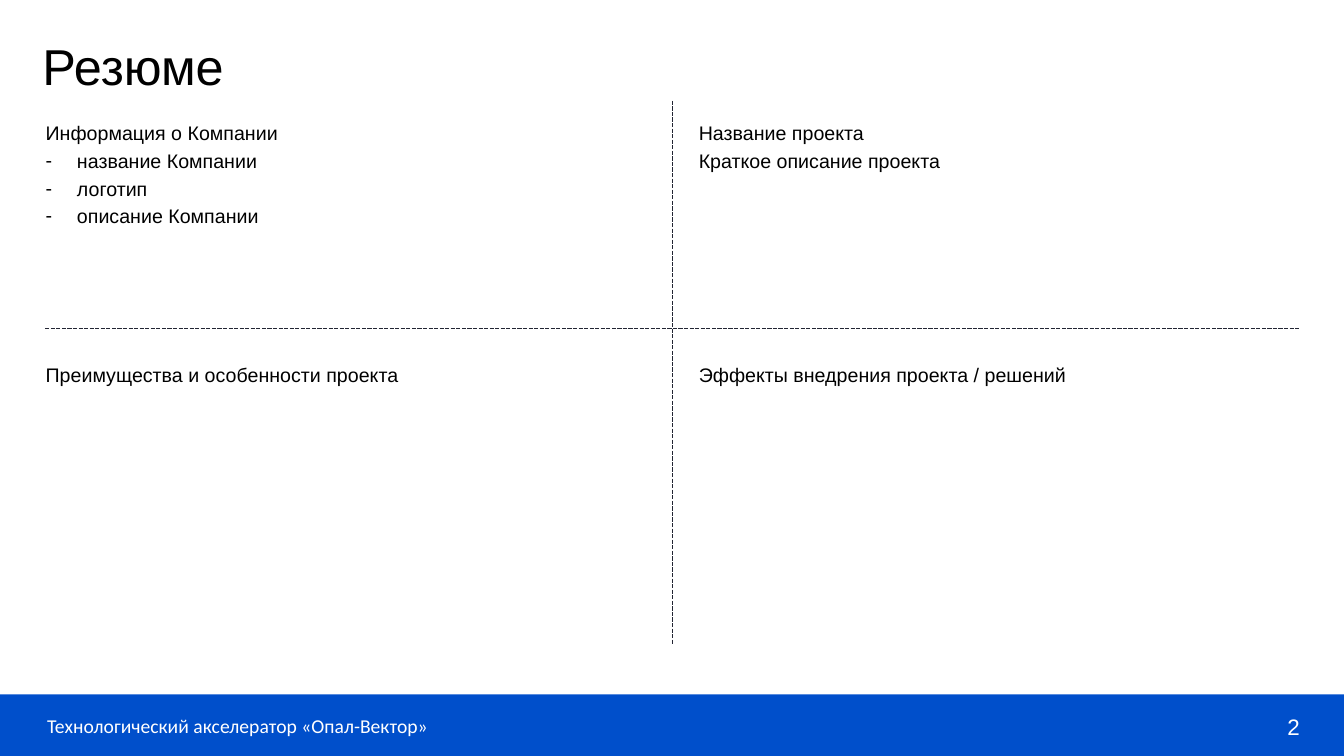
from pptx import Presentation
from pptx.dml.color import RGBColor
from pptx.enum.dml import MSO_LINE
from pptx.enum.shapes import MSO_CONNECTOR, MSO_SHAPE
from pptx.enum.text import MSO_ANCHOR, MSO_AUTO_SIZE, PP_ALIGN
from pptx.oxml.ns import qn
from pptx.util import Cm, Pt
from lxml.etree import SubElement

# Content: quadrants row by row, each line as (bulleted, text)
TITLE = "Резюме"
QUADRANTS = [
    [
        [(False, "Информация о Компании"), (True, "название Компании"),
         (True, "логотип"), (True, "описание Компании")],
        [(False, "Название проекта"), (False, "Краткое описание проекта")],
    ],
    [
        [(False, "Преимущества и особенности проекта")],
        [(False, "Эффекты внедрения проекта / решений")],
    ],
]
FOOTER = "Технологический акселератор «Опал-Вектор»"
PAGE_NUMBER = "2"

# Layout in centimetres
PAGE_WIDTH, PAGE_HEIGHT = 33.87, 19.05
COLUMNS = [(1.02, 15.42), (17.48, 15.29)]
ROW_TOPS = [2.92, 9.02]
LINE_HEIGHT, LINE_STEP = 0.86, 0.7
BAR_TOP = 17.5
DIVIDERS = [(16.94, 2.54, 16.94, 16.23), (1.14, 8.28, 32.74, 8.28)]
INSET, INDENT = 0.13, 0.79

BLACK, WHITE, BLUE, DARK = "000000", "FFFFFF", "004FCB", "222533"


def color(value):
    return RGBColor.from_string(value)


def place(box, left, top, width, height, wrap=True):
    box.left, box.top, box.width, box.height = map(Cm, (left, top, width, height))
    frame = box.text_frame
    frame.word_wrap = wrap
    frame.auto_size = MSO_AUTO_SIZE.NONE
    frame.vertical_anchor = MSO_ANCHOR.TOP
    frame.margin_left = frame.margin_right = Cm(INSET)
    frame.margin_top = frame.margin_bottom = Cm(INSET)
    return frame


def write(para, text, size, ink=BLACK, font="Arial", align=PP_ALIGN.LEFT):
    para.alignment = align
    span = para.add_run()
    span.text = text
    span.font.size = Pt(size)
    span.font.name = font
    span.font.bold = False
    span.font.color.rgb = color(ink)


def set_bullet(para, bulleted):
    indent = Cm(INDENT) if bulleted else 0
    properties = para._p.get_or_add_pPr()
    properties.set("marL", str(indent))
    properties.set("indent", str(-indent))
    if bulleted:
        SubElement(properties, qn("a:buChar")).set("char", "-")
    else:
        SubElement(properties, qn("a:buNone"))


deck = Presentation()
deck.slide_width, deck.slide_height = Cm(PAGE_WIDTH), Cm(PAGE_HEIGHT)
page = deck.slides.add_slide(deck.slide_layouts.get_by_name("Comparison"))

# Footer bar with caption and page number
bar = page.shapes.add_shape(MSO_SHAPE.RECTANGLE, 0, Cm(BAR_TOP),
                            Cm(PAGE_WIDTH), Cm(PAGE_HEIGHT - BAR_TOP))
bar.shadow.inherit = False
bar.fill.solid()
bar.fill.fore_color.rgb = color(BLUE)
bar.line.fill.background()

caption = page.shapes.add_textbox(0, 0, 0, 0)
frame = place(caption, 1.06, 17.86, 11.1, 0.86, wrap=False)
write(frame.paragraphs[0], FOOTER, 14, WHITE, "Calibri")

number = page.shapes.add_textbox(0, 0, 0, 0)
frame = place(number, 31.8, 17.84, 1.09, 0.92)
write(frame.paragraphs[0], PAGE_NUMBER, 16, WHITE, align=PP_ALIGN.RIGHT)

# Title
frame = place(page.shapes.title, 0.94, 0.76, 24.1, 1.78)
write(frame.paragraphs[0], TITLE, 36)

# Four quadrants in the body placeholders
bodies = iter([box for box in page.placeholders if box.placeholder_format.idx > 0])
for top, row in zip(ROW_TOPS, QUADRANTS):
    for (left, width), lines in zip(COLUMNS, row):
        height = LINE_HEIGHT + LINE_STEP * (len(lines) - 1)
        frame = place(next(bodies), left, top, width, height)
        for index, (bulleted, text) in enumerate(lines):
            para = frame.add_paragraph() if index else frame.paragraphs[0]
            para.space_before = Pt(3)
            set_bullet(para, bulleted)
            write(para, text, 14)

# Dashed dividers
for ends in DIVIDERS:
    divider = page.shapes.add_connector(MSO_CONNECTOR.STRAIGHT, *map(Cm, ends))
    divider.line.color.rgb = color(DARK)
    divider.line.width = Pt(1)
    divider.line.dash_style = MSO_LINE.SQUARE_DOT
    SubElement(divider._element.spPr, qn("a:effectLst"))

deck.save("out.pptx")
